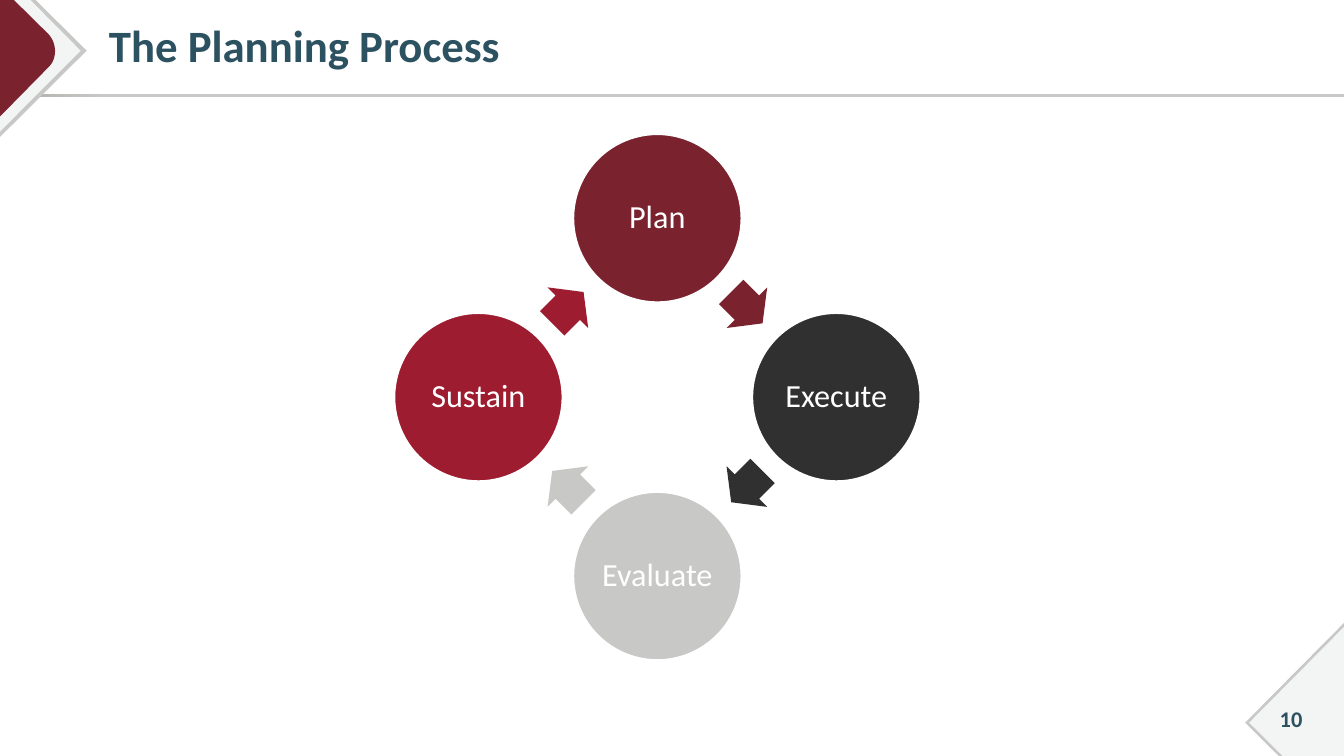
from dataclasses import dataclass

from pptx import Presentation
from pptx.dml.color import RGBColor
from pptx.enum.shapes import MSO_SHAPE
from pptx.enum.text import MSO_ANCHOR, MSO_AUTO_SIZE, PP_ALIGN
from pptx.util import Inches, Pt

OVAL, ARROW, RECT = MSO_SHAPE.OVAL, MSO_SHAPE.RIGHT_ARROW, MSO_SHAPE.RECTANGLE
MIDDLE, FIXED = MSO_ANCHOR.MIDDLE, MSO_AUTO_SIZE.NONE
LEFT, CENTER = PP_ALIGN.LEFT, PP_ALIGN.CENTER
WIDTH, HEIGHT = 13.33, 7.5


@dataclass(frozen=True)
class Theme:
    font: str = "Calibri"
    ink: str = "2C5261"
    white: str = "FFFFFF"
    wine: str = "7A232F"
    red: str = "9E1C30"
    dark: str = "303030"
    gray: str = "C8C8C6"
    shade: str = "ABABA8"
    pale: str = "F3F4F4"
    title: int = 32
    label: int = 23
    number: int = 16


THEME = Theme()


def color(code):
    return RGBColor.from_string(code)


def paint(shape, code):
    shape.shadow.inherit = False
    shape.fill.solid()
    shape.fill.fore_color.rgb = color(code)
    shape.line.fill.background()


def write(shape, text, size, code, bold, align, insets):
    frame = shape.text_frame
    frame.text = text
    frame.word_wrap = True
    frame.auto_size = FIXED
    frame.vertical_anchor = MIDDLE
    (frame.margin_left, frame.margin_top,
     frame.margin_right, frame.margin_bottom) = map(Inches, insets)
    para = frame.paragraphs[0]
    para.alignment = align
    para.line_spacing = 0.9
    para.font.name = THEME.font
    para.font.size = Pt(size)
    para.font.bold = bold
    para.font.color.rgb = color(code)


def outline(slide, box, shares, code):
    x, y, w, h = box
    points = [(Inches(x + w * a), Inches(y + h * b)) for a, b in shares]
    path = slide.shapes.build_freeform(*points[0])
    path.add_line_segments(points[1:])
    paint(path.convert_to_shape(), code)


def curve(a, b, c, d, steps=16):
    for step in range(steps + 1):
        t = step / steps
        u = 1 - t
        yield tuple(u**3 * p + 3 * u * u * t * q + 3 * u * t * t * r + t**3 * s
                    for p, q, r, s in zip(a, b, c, d))


def header(slide, box, text):
    x, y, w, h = box
    rule = slide.shapes.add_shape(
        RECT, Inches(x), Inches(y + h - 0.03), Inches(w), Inches(0.03))
    paint(rule, THEME.gray)
    rule.fill.gradient()
    rule.fill.gradient_angle = 0
    stops = zip(rule.fill.gradient_stops, (0, 0.08), (THEME.shade, THEME.gray))
    for stop, place, code in stops:
        stop.position = place
        stop.color.rgb = color(code)

    round_tip = curve((0.56, 0.25), (0.66, 0.32), (0.66, 0.43), (0.56, 0.49))
    badge = (x, y, 0.86, 1.36)
    outline(slide, badge, [(0, 0), (0.41, 0), (1, 0.37), (0, 1)], THEME.gray)
    outline(slide, badge, [(0, 0), (0.35, 0), (0.93, 0.37), (0, 0.96)], THEME.pale)
    outline(slide, badge, [(0, 0), (0.16, 0), *round_tip, (0, 0.85)], THEME.wine)

    title = slide.shapes.title
    title.left, title.top = Inches(x + 0.88), Inches(y + 0.05)
    title.width, title.height = Inches(w - 1.21), Inches(h - 0.1)
    write(title, text, THEME.title, THEME.ink, True, LEFT, (0.2, 0.05, 0.1, 0.05))


def corner(slide, box, text):
    x, y, w, h = box
    outline(slide, box, [(1, 0), (1, 1), (0.34, 1), (0, 0.75)], THEME.gray)
    outline(slide, box, [(1, 0.03), (1, 1), (0.38, 1), (0.04, 0.75)], THEME.pale)
    number = slide.shapes.add_textbox(
        Inches(x + 0.1), Inches(y + 0.77), Inches(0.71), Inches(0.4))
    write(number, text, THEME.number, THEME.ink, True, CENTER, (0.1, 0.05, 0.1, 0.05))


def center(slide, kind, x, y, w, h, code):
    shape = slide.shapes.add_shape(
        kind, Inches(x - w / 2), Inches(y - h / 2), Inches(w), Inches(h))
    paint(shape, code)
    return shape


def cycle(slide, box, stages):
    x, y, w, h = box
    mid_x, mid_y = x + w / 2, y + h / 2
    disc = w * 0.32
    node = (0, (disc - h) / 2)
    link = (w * 0.17, -w * 0.17)
    for turn, (text, code) in enumerate(stages):
        circle = center(slide, OVAL, mid_x + node[0], mid_y + node[1],
                        disc, disc, code)
        circle.line.color.rgb = color(THEME.white)
        circle.line.width = Pt(1.5)
        write(circle, text, THEME.label, THEME.white, False, CENTER, (0.03,) * 4)
        arrow = center(slide, ARROW, mid_x + link[0], mid_y + link[1],
                       0.44, 0.57, code)
        arrow.adjustments[0] = 0.6
        arrow.adjustments[1] = 0.5
        arrow.rotation = 45 + 90 * turn
        node = (-node[1], node[0])
        link = (-link[1], link[0])


def main():
    deck = Presentation()
    deck.slide_width, deck.slide_height = Inches(WIDTH), Inches(HEIGHT)
    slide = deck.slides.add_slide(deck.slide_layouts[5])
    header(slide, (0, 0, WIDTH, 0.96), "The Planning Process")
    corner(slide, (WIDTH - 0.98, HEIGHT - 1.32, 0.98, 1.32), "10")
    cycle(slide, (3.91, 1.33, 5.22, 5.22), [
        ("Plan", THEME.wine),
        ("Execute", THEME.dark),
        ("Evaluate", THEME.gray),
        ("Sustain", THEME.red),
    ])
    deck.save("out.pptx")


if __name__ == "__main__":
    main()
